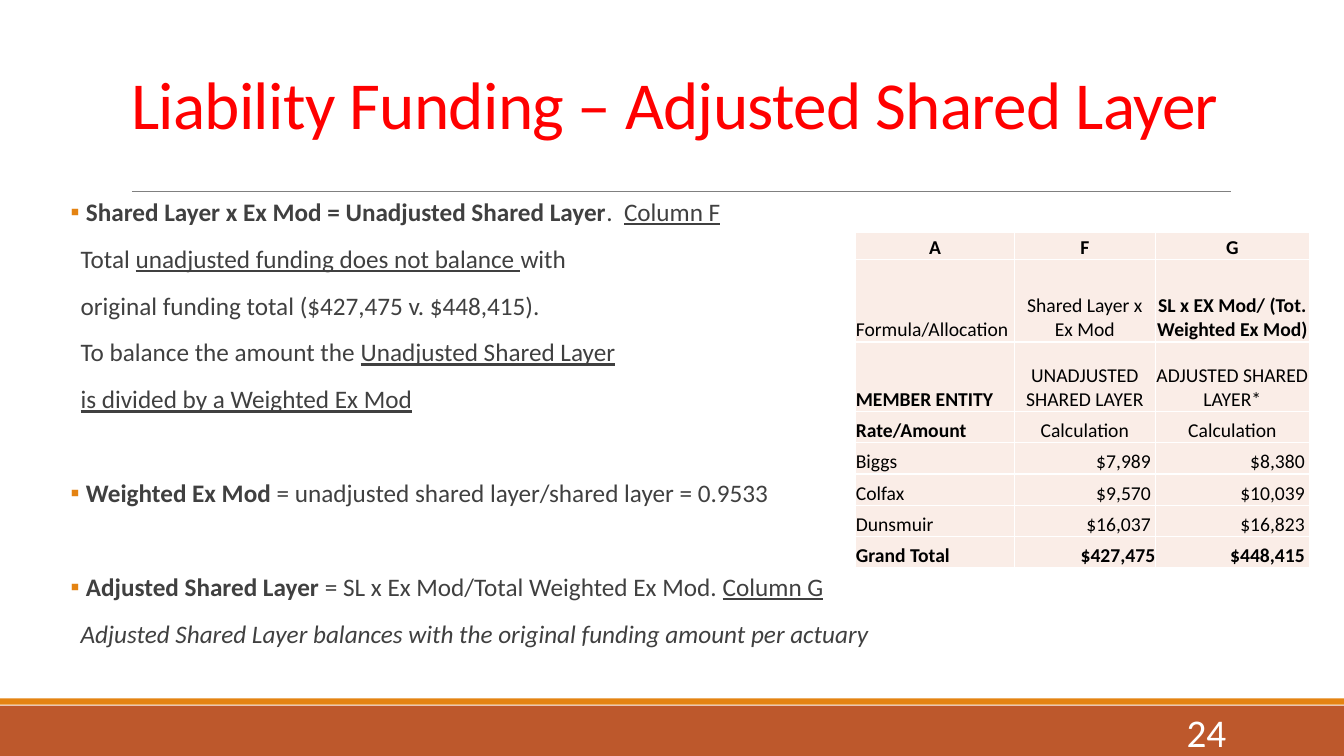
from dataclasses import dataclass

from lxml.etree import SubElement
from pptx import Presentation
from pptx.dml.color import RGBColor
from pptx.enum.shapes import MSO_CONNECTOR, MSO_SHAPE
from pptx.enum.text import MSO_ANCHOR, MSO_AUTO_SIZE, PP_ALIGN
from pptx.oxml.ns import qn
from pptx.util import Pt

TITLE = "Liability Funding – Adjusted Shared Layer"
PAGE = "24"

# Each line: kind, then runs of (text, style); styles are b, u, i
NOTES = [
    ("bullet", [("Shared Layer x Ex Mod = Unadjusted Shared Layer", "b"),
                (".  ", ""), ("Column F", "u")]),
    ("plain", [("Total ", ""), ("unadjusted funding does not balance ", "u"), ("with", "")]),
    ("plain", [("original funding total ($427,475 v. $448,415).", "")]),
    ("plain", [("To balance the amount the ", ""), ("Unadjusted Shared Layer", "u")]),
    ("plain", [("is divided by a Weighted Ex Mod", "u")]),
    ("bullet", [("Weighted Ex Mod ", "b"),
                ("= unadjusted shared layer/shared layer = 0.9533", "")]),
    ("bullet", [("Adjusted Shared Layer ", "b"),
                ("= SL x Ex Mod/Total Weighted Ex Mod. ", ""), ("Column G", "u")]),
    ("plain", [("Adjusted Shared Layer balances with the original funding amount per actuary", "i")]),
]

# Each row: height, cell texts, columns in bold
ROWS = [
    (19.4, ("A", "F", "G"), (0, 1, 2)),
    (59, ("Formula/Allocation", "Shared Layer x\vEx Mod",
          "SL x EX Mod/ (Tot. Weighted Ex Mod)"), (2,)),
    (49.5, ("MEMBER ENTITY", "UNADJUSTED SHARED LAYER", "ADJUSTED SHARED LAYER*"), (0,)),
    (22.4, ("Rate/Amount", "Calculation", "Calculation"), (0,)),
    (22.4, ("Biggs", "$7,989 ", "$8,380 "), ()),
    (22.4, ("Colfax", "$9,570 ", "$10,039 "), ()),
    (22.4, ("Dunsmuir", "$16,037 ", "$16,823 "), ()),
    (22.4, ("Grand Total", "$427,475", "$448,415 "), (0, 1, 2)),
]
COLUMNS = (113.2, 100.8, 110)


@dataclass(frozen=True)
class Theme:
    font: str = "Calibri"
    title: str = "FF0000"
    text: str = "404040"
    accent: str = "E48312"
    footer: str = "BD582C"
    rule: str = "808080"
    cell: str = "FAEDE7"
    ink: str = "000000"
    white: str = "FFFFFF"
    title_size: int = 48
    body_size: int = 18
    table_size: int = 14
    page_size: int = 28


THEME = Theme()


def rgb(color):
    return RGBColor.from_string(color)


def box(left, top, width, height):
    return Pt(left), Pt(top), Pt(width), Pt(height)


def place(sp, *bounds):
    sp.left, sp.top, sp.width, sp.height = box(*bounds)


def style_font(font, size, color, bold=False):
    font.name, font.size, font.bold = THEME.font, Pt(size), bold
    font.color.rgb = rgb(color)


def set_bullet(p, bulleted):
    pPr = p._p.get_or_add_pPr()
    indent = 11 if bulleted else 7.2
    pPr.set("marL", str(Pt(indent)))
    pPr.set("indent", str(-Pt(indent) if bulleted else 0))
    if bulleted:
        color = SubElement(pPr, qn("a:buClr"))
        SubElement(color, qn("a:srgbClr"), val=THEME.accent)
        SubElement(pPr, qn("a:buFont"), typeface=THEME.font)
        SubElement(pPr, qn("a:buChar"), char="▪")
    else:
        SubElement(pPr, qn("a:buNone"))


def set_borders(cell):
    tcPr = cell._tc.get_or_add_tcPr()
    for i, side in enumerate(("lnL", "lnR", "lnT", "lnB")):
        ln = tcPr.makeelement(qn(f"a:{side}"), {"w": str(Pt(1))})
        fill = SubElement(ln, qn("a:solidFill"))
        SubElement(fill, qn("a:srgbClr"), val=THEME.white)
        tcPr.insert(i, ln)


def add_bar(slide, color, *bounds):
    sp = slide.shapes.add_shape(MSO_SHAPE.RECTANGLE, *box(*bounds))
    sp.shadow.inherit = False
    sp.fill.solid()
    sp.fill.fore_color.rgb = rgb(color)
    sp.line.fill.background()


def add_frame(slide):
    """Draw the footer bars, the rule below the title and the page number."""
    add_bar(slide, THEME.footer, 0, 504, 960, 36)
    add_bar(slide, THEME.accent, 0, 498.8, 960, 4.6)
    rule = slide.shapes.add_connector(MSO_CONNECTOR.STRAIGHT, Pt(94.3), Pt(136.6), Pt(879), Pt(136.6))
    rule.line.color.rgb = rgb(THEME.rule)
    rule.line.width = Pt(0.5)
    SubElement(rule._element.spPr, qn("a:effectLst"))

    tf = slide.shapes.add_textbox(*box(780, 508.4, 103, 28.8)).text_frame
    tf.word_wrap = True
    tf.vertical_anchor = MSO_ANCHOR.MIDDLE
    tf.text = PAGE
    p = tf.paragraphs[0]
    p.alignment = PP_ALIGN.RIGHT
    style_font(p.runs[0].font, THEME.page_size, THEME.white)


def fill_title(sp):
    place(sp, 86.4, 22.4, 792, 83.5)
    tf = sp.text_frame
    tf.text = TITLE
    tf.auto_size = MSO_AUTO_SIZE.NONE
    tf.vertical_anchor = MSO_ANCHOR.BOTTOM
    p = tf.paragraphs[0]
    p.alignment, p.line_spacing = PP_ALIGN.LEFT, 0.85
    r = p.runs[0]
    style_font(r.font, THEME.title_size, THEME.title)
    r._r.get_or_add_rPr().set("spc", "-50")


def fill_notes(sp):
    place(sp, 50.4, 139, 800.6, 322)
    tf = sp.text_frame
    tf.auto_size = MSO_AUTO_SIZE.NONE
    tf.vertical_anchor = MSO_ANCHOR.TOP
    tf.margin_left = tf.margin_right = 0
    tf.margin_top = tf.margin_bottom = Pt(3.6)
    for i, (kind, runs) in enumerate(NOTES):
        p = tf.add_paragraph() if i else tf.paragraphs[0]
        bulleted = kind == "bullet"
        set_bullet(p, bulleted)
        p.line_spacing, p.space_after = 0.9, Pt(2)
        p.space_before = Pt(0 if i == 0 else 45.5 if bulleted else 12)
        for text, style in runs:
            r = p.add_run()
            r.text = text
            style_font(r.font, THEME.body_size, THEME.text, "b" in style)
            r.font.underline = "u" in style
            r.font.italic = "i" in style


def cell_alignment(row, col, text):
    if text.startswith("$"):
        return PP_ALIGN.RIGHT
    return PP_ALIGN.LEFT if col == 0 and row > 0 else PP_ALIGN.CENTER


def add_funding_table(slide):
    height = sum(row[0] for row in ROWS)
    bounds = box(611.3, 165.9, sum(COLUMNS), height)
    table = slide.shapes.add_table(len(ROWS), len(COLUMNS), *bounds).table
    table.first_row = table.horz_banding = False
    for column, width in zip(table.columns, COLUMNS):
        column.width = Pt(width)
    for i, (row_height, texts, bold_columns) in enumerate(ROWS):
        table.rows[i].height = Pt(row_height)
        for j, text in enumerate(texts):
            cell = table.cell(i, j)
            cell.fill.solid()
            cell.fill.fore_color.rgb = rgb(THEME.cell)
            set_borders(cell)
            cell.margin_left = cell.margin_right = cell.margin_top = cell.margin_bottom = 0
            cell.vertical_anchor = MSO_ANCHOR.BOTTOM
            p = cell.text_frame.paragraphs[0]
            p.text = text
            p.alignment = cell_alignment(i, j, text)
            for r in p.runs:
                style_font(r.font, THEME.table_size, THEME.ink, j in bold_columns)


def main():
    prs = Presentation()
    prs.slide_width, prs.slide_height = Pt(960), Pt(540)
    slide = prs.slides.add_slide(prs.slide_layouts[1])
    add_frame(slide)
    fill_title(slide.shapes.title)
    fill_notes(slide.placeholders[1])
    add_funding_table(slide)
    prs.save("out.pptx")


if __name__ == "__main__":
    main()
